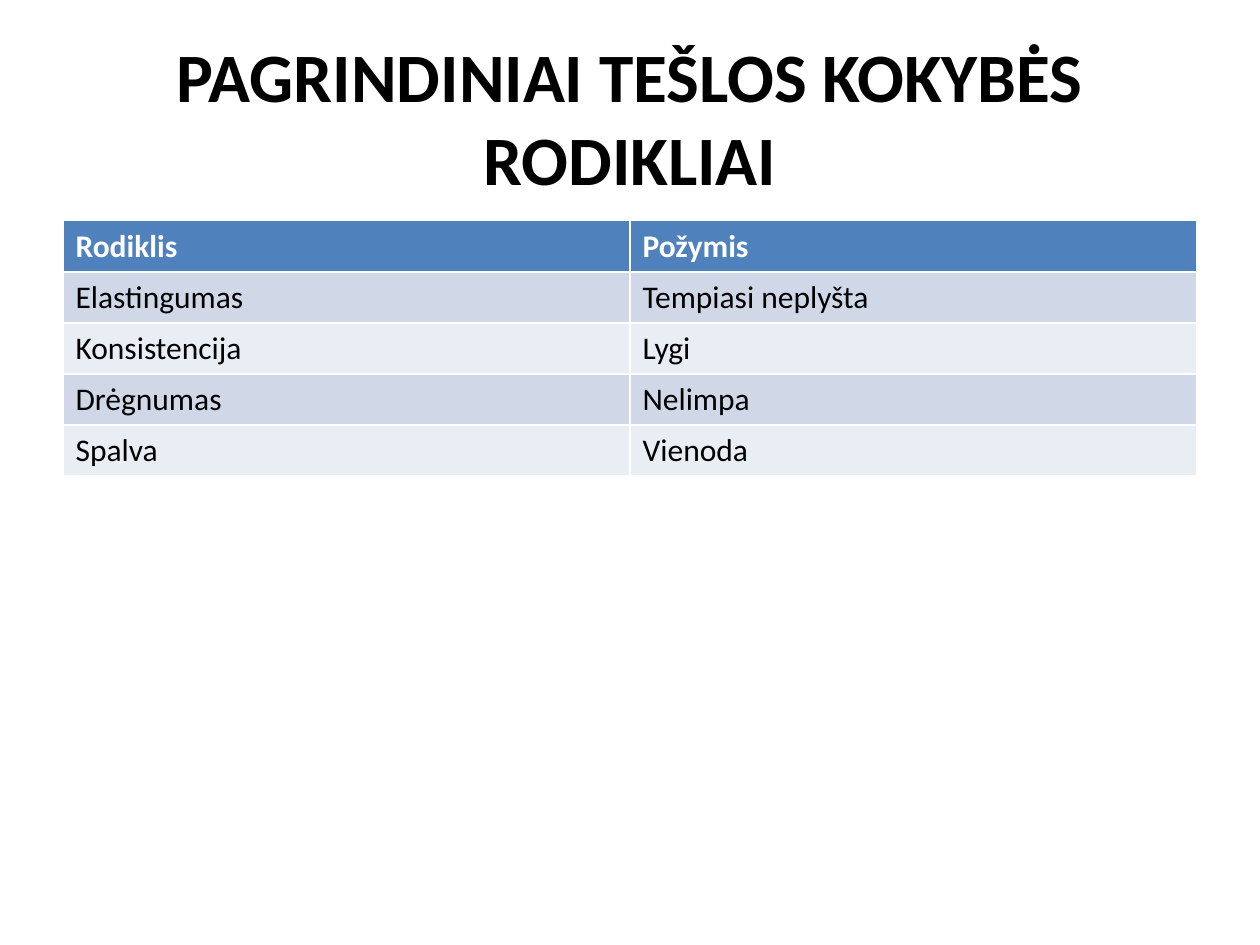
from pptx import Presentation
from pptx.dml.color import RGBColor
from pptx.enum.text import MSO_ANCHOR, MSO_AUTO_SIZE, PP_ALIGN
from pptx.util import Cm, Pt

ROWS = [
    ("Rodiklis", "Požymis"),
    ("Elastingumas", "Tempiasi neplyšta"),
    ("Konsistencija", "Lygi"),
    ("Drėgnumas", "Nelimpa"),
    ("Spalva", "Vienoda"),
]
HEADER_FILL = "4F81BD"
BAND_FILLS = ("E9EDF4", "D0D8E8")
ROW_HEIGHT = Cm(1.03)


def style_font(paragraph, size, color, bold):
    font = paragraph.font
    font.name = "Calibri"
    font.size = Pt(size)
    font.bold = bold
    font.color.rgb = RGBColor.from_string(color)


presentation = Presentation()
presentation.slide_width = Cm(25.4)
presentation.slide_height = Cm(19.05)
slide = presentation.slides.add_slide(presentation.slide_layouts[5])

# Title
title = slide.shapes.title
title.left, title.top, title.width, title.height = Cm(1.27), Cm(0.76), Cm(22.86), Cm(3.18)
title.text_frame.text = "PAGRINDINIAI TEŠLOS KOKYBĖS RODIKLIAI"
title.text_frame.word_wrap = True
title.text_frame.auto_size = MSO_AUTO_SIZE.NONE
title.text_frame.vertical_anchor = MSO_ANCHOR.MIDDLE
paragraph = title.text_frame.paragraphs[0]
paragraph.alignment = PP_ALIGN.CENTER
style_font(paragraph, 39.6, "000000", True)

# Quality indicator table; the default table style draws the white borders
table = slide.shapes.add_table(
    len(ROWS), 2, Cm(1.27), Cm(4.45), Cm(22.86), ROW_HEIGHT * len(ROWS)
).table
for row_index, texts in enumerate(ROWS):
    is_header = row_index == 0
    fill = HEADER_FILL if is_header else BAND_FILLS[row_index % 2]
    for column_index, text in enumerate(texts):
        cell = table.cell(row_index, column_index)
        cell.text = text
        cell.vertical_anchor = MSO_ANCHOR.MIDDLE
        cell.fill.solid()
        cell.fill.fore_color.rgb = RGBColor.from_string(fill)
        style_font(cell.text_frame.paragraphs[0], 18,
                   "FFFFFF" if is_header else "000000", is_header)

presentation.save("out.pptx")
